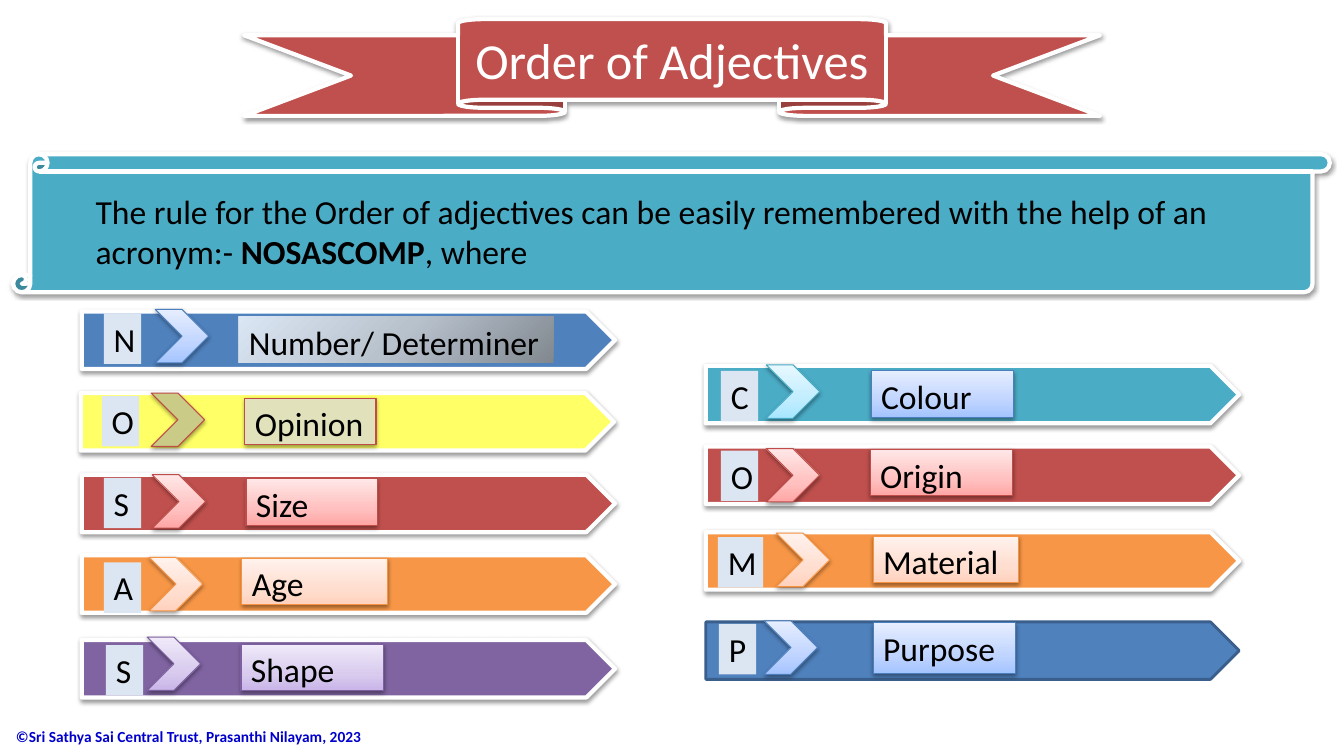
from lxml.etree import SubElement
from pptx import Presentation
from pptx.dml.color import RGBColor
from pptx.enum.shapes import MSO_SHAPE
from pptx.enum.text import MSO_ANCHOR, PP_ALIGN
from pptx.oxml.ns import qn
from pptx.util import Inches, Pt

WHITE = RGBColor(0xFF, 0xFF, 0xFF)
BLACK = RGBColor(0x00, 0x00, 0x00)
CREDIT_BLUE = RGBColor(0x00, 0x00, 0xCC)
LETTER_BLUE = RGBColor(0xDC, 0xE6, 0xF2)
BLUE = RGBColor(0x4F, 0x81, 0xBD)
NAVY = RGBColor(0x3A, 0x5F, 0x8C)
RED = RGBColor(0xC0, 0x50, 0x4D)
ORANGE = RGBColor(0xF7, 0x96, 0x46)
PURPLE = RGBColor(0x80, 0x64, 0xA2)
TEAL = RGBColor(0x4B, 0xAC, 0xC6)
YELLOW = RGBColor(0xFF, 0xFF, 0x66)
OLIVE = RGBColor(0xC9, 0xCB, 0x87)
PALE_OLIVE = RGBColor(0xE1, 0xE2, 0xBC)
BLUE_EDGE = RGBColor(0x4B, 0x7E, 0xBC)
RED_EDGE = RGBColor(0xBF, 0x4C, 0x48)
ORANGE_EDGE = RGBColor(0xF6, 0x92, 0x40)
PURPLE_EDGE = RGBColor(0x7D, 0x60, 0xA0)
TEAL_EDGE = RGBColor(0x46, 0xAA, 0xC5)

# Gradients: (angle, ((position in percent, colour), ...))
def upward(*colours):
    return 90, tuple(zip((0, 35, 100), map(RGBColor.from_string, colours)))


BLUE_FADE = upward("A4C4FF", "BFD4FF", "E6EEFF")
RED_FADE = upward("FFA6A5", "FFC0BF", "FFE7E7")
ORANGE_FADE = upward("FFD2BD", "FFDED0", "FFF2ED")
PURPLE_FADE = upward("C9B5E8", "D8CBEE", "F0EAF9")
TEAL_FADE = upward("A7E6FF", "C1EDFF", "E7F8FF")
GREY_FADE = (135, ((0, RGBColor(0x81, 0x88, 0x90)),
                   (50, RGBColor(0xB8, 0xC2, 0xCD)),
                   (100, RGBColor(0xDA, 0xE6, 0xF3))))

# Content
TITLE = "Order of Adjectives"
RULE = [("The rule for the Order of adjectives can be easily remembered "
         "with the help of an acronym:- ", False),
        ("NOSASCOMP", True), (", where", False)]
CREDIT = "©Sri Sathya Sai Central Trust, Prasanthi Nilayam, 2023"

# Letter, meaning, bar (x, y, fill), chevron (x, y, fill, edge),
# letter (x, y, width), meaning (x, y, width, height, fill, edge)
ADJECTIVES = [
    ("N", "Number/ Determiner", (0.81, 3.09, BLUE), (1.54, 3.07, BLUE_FADE, BLUE_EDGE),
     (1.03, 3.11, 0.37), (2.37, 3.14, 3.12, 0.46, GREY_FADE, None)),
    ("O", "Opinion", (0.8, 3.9, YELLOW), (1.5, 3.9, OLIVE, RED_EDGE),
     (1.01, 3.93, 0.37), (2.43, 3.95, 1.3, 0.46, PALE_OLIVE, RED_EDGE)),
    ("S", "Size", (0.81, 4.71, RED), (1.51, 4.71, RED_FADE, RED_EDGE),
     (1.03, 4.74, 0.37), (2.44, 4.75, 1.3, 0.46, RED_FADE, RED_EDGE)),
    ("A", "Age", (0.81, 5.51, ORANGE), (1.48, 5.53, ORANGE_FADE, ORANGE_EDGE),
     (1.03, 5.58, 0.37), (2.4, 5.54, 1.44, 0.46, ORANGE_FADE, ORANGE_EDGE)),
    ("S", "Shape", (0.81, 6.35, PURPLE), (1.46, 6.32, PURPLE_FADE, PURPLE_EDGE),
     (1.05, 6.4, 0.37), (2.39, 6.39, 1.41, 0.46, PURPLE_FADE, PURPLE_EDGE)),
    ("C", "Colour", (7, 3.63, TEAL), (7.6, 3.62, TEAL_FADE, TEAL_EDGE),
     (7.15, 3.68, 0.37), (8.64, 3.68, 1.41, 0.46, BLUE_FADE, BLUE_EDGE)),
    ("O", "Origin", (7, 4.43, RED), (7.6, 4.45, RED_FADE, RED_EDGE),
     (7.15, 4.47, 0.37), (8.63, 4.46, 1.41, 0.46, RED_FADE, RED_EDGE)),
    ("M", "Material", (7, 5.28, ORANGE), (7.7, 5.29, ORANGE_FADE, ORANGE_EDGE),
     (7.12, 5.33, 0.45), (8.66, 5.32, 1.44, 0.46, ORANGE_FADE, ORANGE_EDGE)),
    ("P", "Purpose", (7, 6.17, BLUE), (7.58, 6.16, BLUE_FADE, BLUE_EDGE),
     (7.13, 6.19, 0.37), (8.66, 6.18, 1.41, 0.5, BLUE_FADE, BLUE_EDGE)),
]

# Formats
BODY = {"name": "Calibri", "size": Pt(24)}
HEADING = {"name": "Calibri", "size": Pt(36), "bold": False}
SMALL = {"name": "Calibri", "size": Pt(11), "bold": True}
BAR_SIZE = (5.29, 0.57)
CHEVRON_SIZE = (0.53, 0.53)
LETTER_HEIGHT = 0.5


def paint(shape, fill):
    if isinstance(fill, RGBColor):
        shape.fill.solid()
        shape.fill.fore_color.rgb = fill
        return
    angle, stops = fill
    shape.fill.gradient()
    shape.fill.gradient_angle = angle
    stop_list = shape._element.spPr.find(".//" + qn("a:gsLst"))
    for stop in list(stop_list):
        stop_list.remove(stop)
    for position, colour in stops:
        stop = SubElement(stop_list, qn("a:gs"), pos=str(position * 1000))
        SubElement(stop, qn("a:srgbClr"), val=str(colour))


def add_part(slide, kind, box, fill, edge=None, width=0.75, shadow=True):
    shape = slide.shapes.add_shape(kind, *map(Inches, box))
    paint(shape, fill)
    if edge is None:
        shape.line.fill.background()
    else:
        shape.line.color.rgb = edge
        shape.line.width = Pt(width)
    shape.shadow.inherit = False
    if edge is not None and shadow:
        effects = shape._element.spPr.find(qn("a:effectLst"))
        outer = SubElement(effects, qn("a:outerShdw"), blurRad="40000", dist="20000",
                           dir="5400000", rotWithShape="0")
        colour = SubElement(outer, qn("a:srgbClr"), val=str(BLACK))
        SubElement(colour, qn("a:alpha"), val="38000")
    return shape


def write(shape, runs, style, colour=BLACK, align=PP_ALIGN.LEFT, anchor=MSO_ANCHOR.TOP):
    frame = shape.text_frame
    frame.word_wrap = True
    frame.vertical_anchor = anchor
    paragraph = frame.paragraphs[0]
    paragraph.alignment = align
    for text, bold in runs:
        run = paragraph.add_run()
        run.text = text
        for key, value in {"bold": bold, **style}.items():
            setattr(run.font, key, value)
        run.font.color.rgb = colour


def place(shape, box):
    for side, value in zip(("left", "top", "width", "height"), box):
        setattr(shape, side, Inches(value))


def main():
    deck = Presentation()
    deck.slide_width, deck.slide_height = Inches(13.33), Inches(7.5)
    slide = deck.slides.add_slide(deck.slide_layouts[5])

    # Title on its ribbon
    add_part(slide, MSO_SHAPE.UP_RIBBON, (2.42, 0.19, 8.49, 0.96), RED, WHITE, 3)
    title = slide.shapes.title
    place(title, (4.54, 0.19, 4.25, 0.8))
    write(title, [(TITLE, False)], HEADING, WHITE, PP_ALIGN.CENTER, MSO_ANCHOR.MIDDLE)
    slide.shapes._spTree.append(title._element)

    # Rule on its scroll
    add_part(slide, MSO_SHAPE.VERTICAL_SCROLL, (0.13, 1.53, 13.06, 1.37), TEAL, WHITE, 3)
    rule = slide.shapes.add_textbox(*map(Inches, (0.85, 1.84, 11.76, 0.91)))
    write(rule, RULE, BODY)

    # One bar per letter of the acronym
    for letter, meaning, bar, chevron, letter_box, meaning_box in ADJECTIVES:
        x, y, fill = bar
        last = meaning == "Purpose"
        add_part(slide, MSO_SHAPE.PENTAGON, (x, y, *BAR_SIZE), fill,
                 NAVY if last else WHITE, 2 if last else 3, shadow=not last)
        x, y, fill, edge = chevron
        add_part(slide, MSO_SHAPE.CHEVRON, (x, y, *CHEVRON_SIZE), fill, edge)
        tile = add_part(slide, MSO_SHAPE.RECTANGLE, (*letter_box, LETTER_HEIGHT), LETTER_BLUE)
        write(tile, [(letter, False)], BODY)
        *box, fill, edge = meaning_box
        plate = add_part(slide, MSO_SHAPE.RECTANGLE, box, fill, edge)
        write(plate, [(meaning, False)], BODY)

    # Copyright line
    credit = slide.shapes.add_textbox(*map(Inches, (0.06, 7.1, 3.76, 0.41)))
    write(credit, [(CREDIT, True)], SMALL, CREDIT_BLUE, anchor=MSO_ANCHOR.MIDDLE)

    deck.save("out.pptx")


if __name__ == "__main__":
    main()
